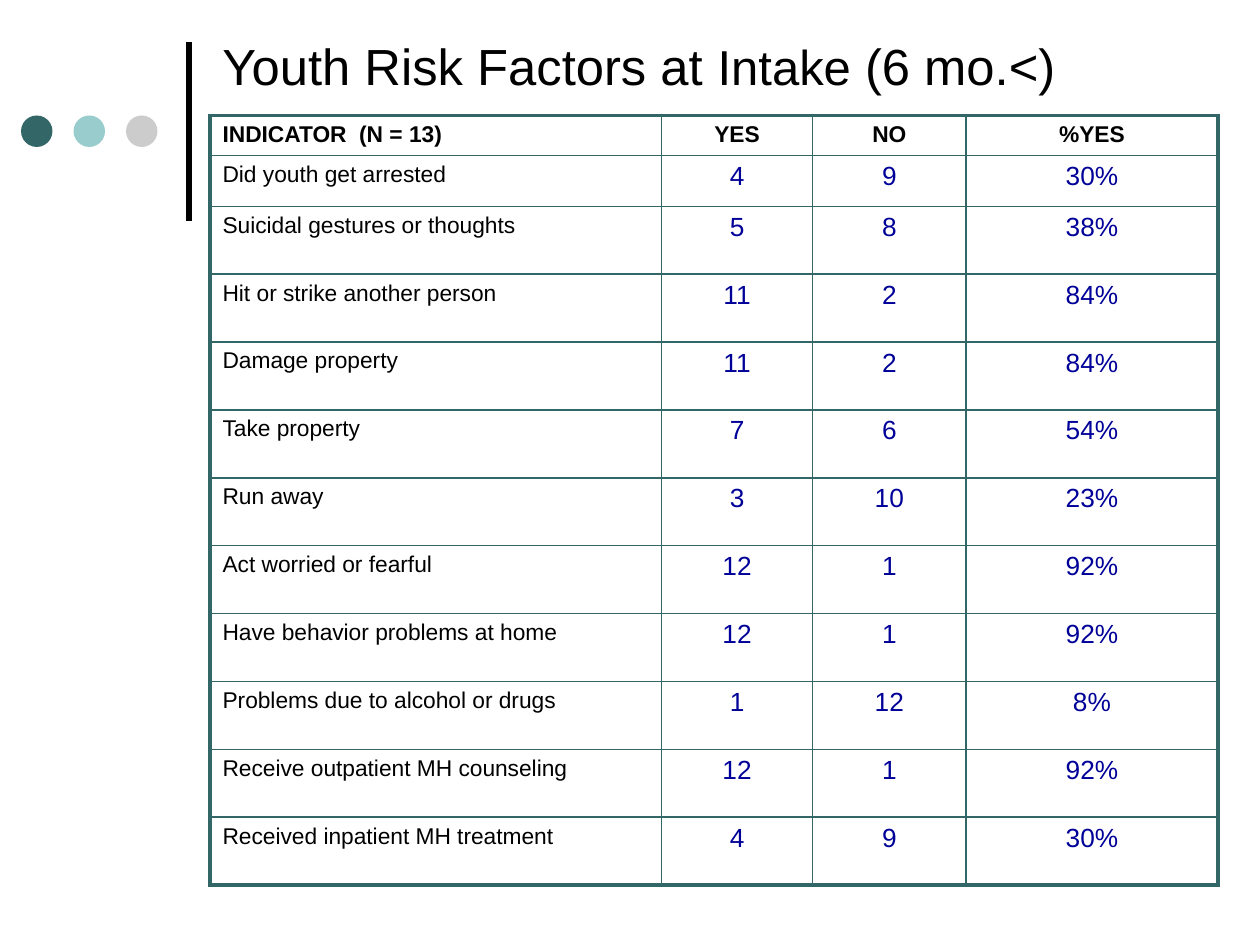
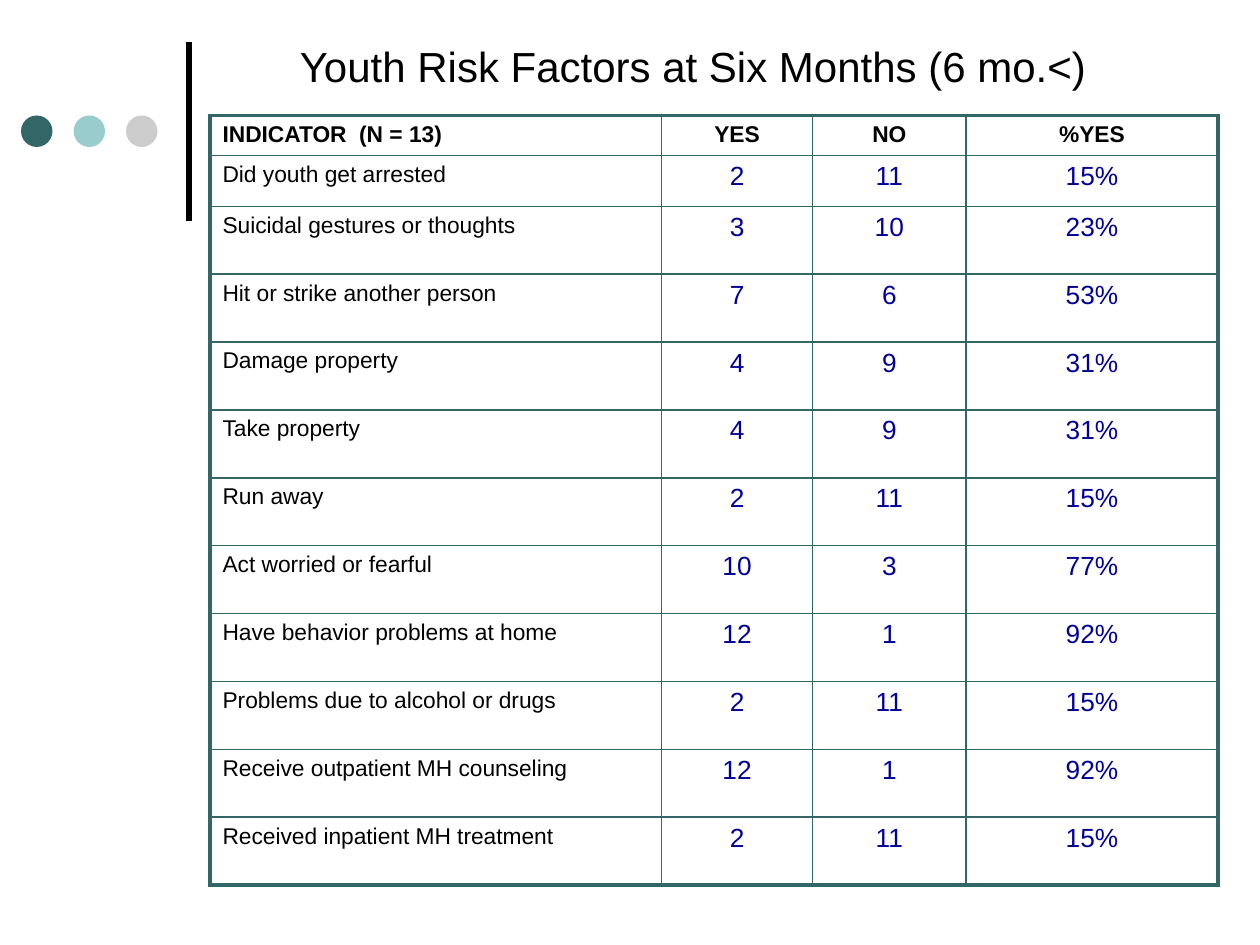
import pptx
import pptx.util
import pptx.dml.color
import pptx.enum.shapes
import pptx.enum.text
import pptx.oxml.ns
import lxml.etree

Align = pptx.enum.text.PP_ALIGN
Anchor = pptx.enum.text.MSO_ANCHOR

COLORS = {"ink": "000000", "teal": "336666", "aqua": "99CCCC",
          "gray": "CCCCCC", "number": "000099"}
FONT = "Arial"

# Square grid: 24 columns by 18 rows on a 10 x 7.5 inch slide
SLIDE_WIDTH = pptx.util.Inches(10)
SLIDE_HEIGHT = pptx.util.Inches(7.5)
UNIT = SLIDE_WIDTH / 24

CONTENT_LEFT = 4
CONTENT_TOP = 2.2
COLUMN_WIDTHS = [8.6, 2.88, 2.92, 4.8]
TABLE_HEIGHT = 14.66
TOP_ROWS = [0.76, 0.97]
THIN, THICK = 1, 2.25

HEADERS = ["INDICATOR  (N = 13)", "YES", "NO", "%YES"]
INDICATORS = [
    "Did youth get arrested",
    "Suicidal gestures or thoughts",
    "Hit or strike another person",
    "Damage property",
    "Take property",
    "Run away",
    "Act worried or fearful",
    "Have behavior problems at home",
    "Problems due to alcohol or drugs",
    "Receive outpatient MH counseling",
    "Received inpatient MH treatment",
]
# Yes, no and percentage for each indicator
INTAKE = [(4, 9, "30%"), (5, 8, "38%"), (11, 2, "84%"), (11, 2, "84%"),
          (7, 6, "54%"), (3, 10, "23%"), (12, 1, "92%"), (12, 1, "92%"),
          (1, 12, "8%"), (12, 1, "92%"), (4, 9, "30%")]
SIX_MONTHS = [(2, 11, "15%"), (3, 10, "23%"), (7, 6, "53%"), (4, 9, "31%"),
              (4, 9, "31%"), (2, 11, "15%"), (10, 3, "77%"), (12, 1, "92%"),
              (2, 11, "15%"), (12, 1, "92%"), (2, 11, "15%")]


def grid(*lengths):
    return [pptx.util.Emu(round(length * UNIT)) for length in lengths]


def rgb(name):
    return pptx.dml.color.RGBColor.from_string(COLORS[name])


def style_font(font, size, color="ink", bold=False):
    font.name = FONT
    font.size = pptx.util.Pt(size)
    font.bold = bold
    font.color.rgb = rgb(color)


def add_decoration(slide):
    """Vertical rule and three dots at the left of each slide."""
    rule = slide.shapes.add_connector(
        pptx.enum.shapes.MSO_CONNECTOR.STRAIGHT, *grid(3.6, 4.2, 3.6, 0.8))
    rule.line.color.rgb = rgb("ink")
    rule.line.width = pptx.util.Pt(3)
    lxml.etree.SubElement(rule.element.spPr, pptx.oxml.ns.qn("a:effectLst"))

    for position, color in enumerate(["teal", "aqua", "gray"]):
        dot = slide.shapes.add_shape(
            pptx.enum.shapes.MSO_SHAPE.OVAL,
            *grid(0.4 + position, CONTENT_TOP, 0.6, 0.6))
        dot.shadow.inherit = False
        dot.fill.solid()
        dot.fill.fore_color.rgb = rgb(color)
        dot.line.fill.background()


def add_title(slide, parts, alignment):
    """Title made of (text, size) parts."""
    box = slide.shapes.add_textbox(*grid(CONTENT_LEFT, 0.5, 18.4, 1.5))
    frame = box.text_frame
    frame.word_wrap = True
    frame.vertical_anchor = Anchor.MIDDLE
    paragraph = frame.paragraphs[0]
    paragraph.alignment = alignment
    for text, size in parts:
        run = paragraph.add_run()
        run.text = text
        style_font(run.font, size)


def set_borders(cell, widths):
    """Draw the left, right, top and bottom borders, in that order."""
    properties = cell._tc.get_or_add_tcPr()
    for side, width in zip("LRTB", widths):
        line = lxml.etree.SubElement(
            properties, pptx.oxml.ns.qn(f"a:ln{side}"),
            w=str(pptx.util.Pt(width)))
        fill = lxml.etree.SubElement(line, pptx.oxml.ns.qn("a:solidFill"))
        lxml.etree.SubElement(
            fill, pptx.oxml.ns.qn("a:srgbClr"), val=COLORS["teal"])


def fill_cell(cell, text, row, column, last_row):
    last_column = len(COLUMN_WIDTHS) - 1
    edges = [column == 0, column == last_column, row == 0, row == last_row]
    set_borders(cell, [THICK if edge else THIN for edge in edges])
    cell.fill.background()
    cell.text = str(text)
    paragraph = cell.text_frame.paragraphs[0]
    paragraph.alignment = Align.LEFT if column == 0 else Align.CENTER
    if row > 0 and column > 0:
        style_font(paragraph.font, 15, "number")
    else:
        style_font(paragraph.font, 13, bold=row == 0)


def add_indicator_table(slide, results):
    rows = [HEADERS] + [[name, *result]
                        for name, result in zip(INDICATORS, results)]
    table = slide.shapes.add_table(
        len(rows), len(COLUMN_WIDTHS),
        *grid(CONTENT_LEFT, CONTENT_TOP, sum(COLUMN_WIDTHS), TABLE_HEIGHT)).table
    table.first_row = False
    table.horz_banding = False

    for column, width in zip(table.columns, grid(*COLUMN_WIDTHS)):
        column.width = width
    # The rows below the top two share the remaining height equally
    equal_rows = len(rows) - len(TOP_ROWS)
    equal_height = (TABLE_HEIGHT - sum(TOP_ROWS)) / equal_rows
    heights = TOP_ROWS + [equal_height] * equal_rows
    for row, height in zip(table.rows, grid(*heights)):
        row.height = height

    for row, values in enumerate(rows):
        for column, value in enumerate(values):
            fill_cell(table.cell(row, column), value, row, column, len(rows) - 1)


def add_results_slide(presentation, title_parts, alignment, results):
    slide = presentation.slides.add_slide(presentation.slide_layouts[6])
    add_decoration(slide)
    add_title(slide, title_parts, alignment)
    add_indicator_table(slide, results)


def main():
    presentation = pptx.Presentation()
    presentation.slide_width = SLIDE_WIDTH
    presentation.slide_height = SLIDE_HEIGHT

    add_results_slide(
        presentation,
        [("Youth Risk Factors at ", 29), ("Intake", 28), (" (6 mo.<)", 29)],
        Align.LEFT, INTAKE)
    add_results_slide(
        presentation,
        [("Youth Risk Factors at Six Months (6 mo.<)", 24)],
        Align.CENTER, SIX_MONTHS)

    presentation.save("out.pptx")


if __name__ == "__main__":
    main()
